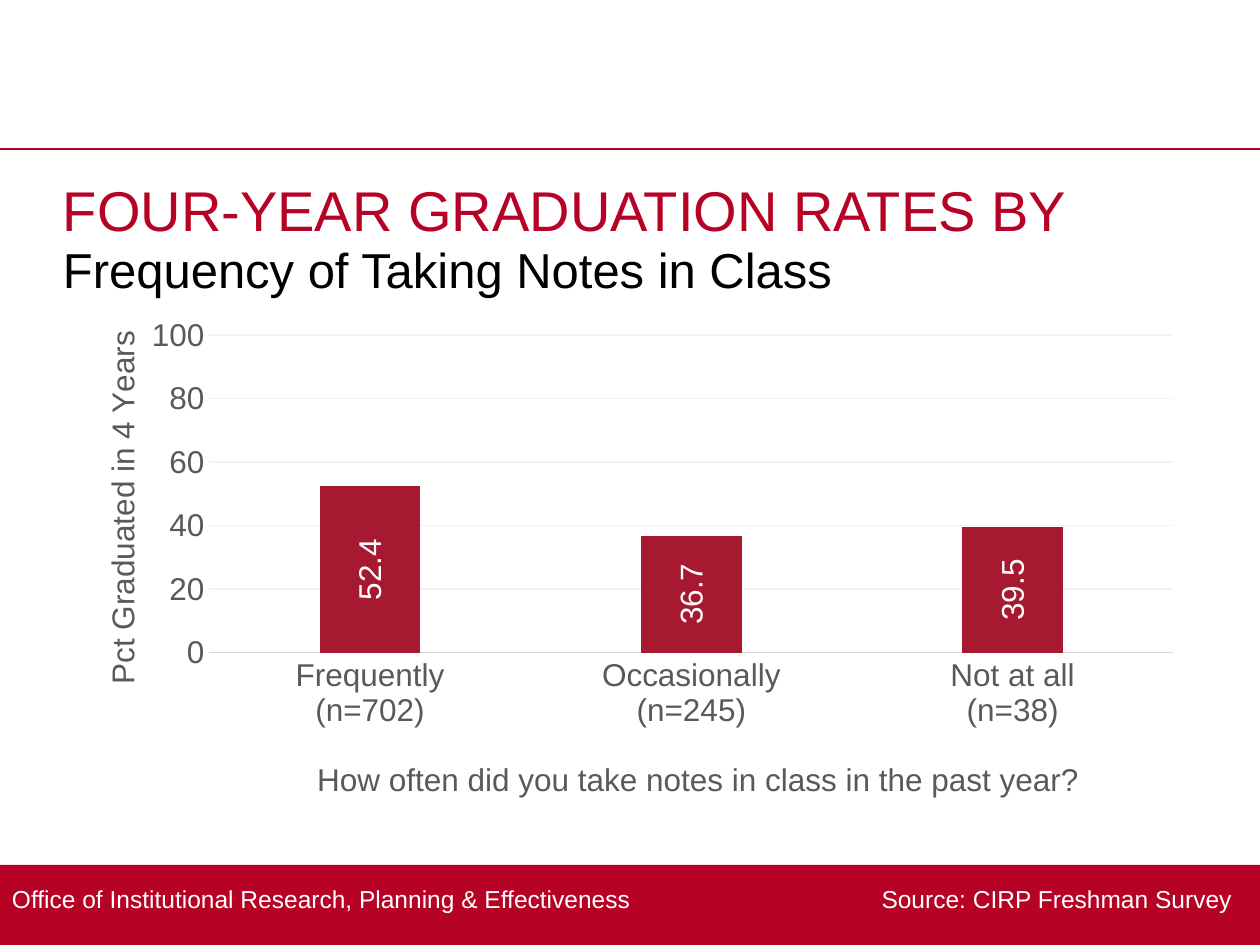
from lxml import etree
from pptx import Presentation
from pptx.chart.data import CategoryChartData
from pptx.dml.color import RGBColor
from pptx.enum.chart import XL_CHART_TYPE, XL_LABEL_POSITION, XL_TICK_MARK
from pptx.enum.shapes import MSO_CONNECTOR, MSO_SHAPE
from pptx.enum.text import MSO_ANCHOR
from pptx.oxml.ns import qn
from pptx.util import Emu, Pt

COLUMNS = XL_CHART_TYPE.COLUMN_CLUSTERED
CENTER = XL_LABEL_POSITION.CENTER
NO_TICK = XL_TICK_MARK.NONE
STRAIGHT = MSO_CONNECTOR.STRAIGHT
RECTANGLE = MSO_SHAPE.RECTANGLE
TOP, MIDDLE = MSO_ANCHOR.TOP, MSO_ANCHOR.MIDDLE

RED = RGBColor(0xB6, 0x02, 0x25)
BAR_RED = RGBColor(0xA7, 0x19, 0x30)
BLACK = RGBColor(0, 0, 0)
WHITE = RGBColor(0xFF, 0xFF, 0xFF)
GRAY = RGBColor(0x59, 0x59, 0x59)
AXIS_GRAY = RGBColor(0xD9, 0xD9, 0xD9)
GRID_GRAY = RGBColor(0xF2, 0xF2, 0xF2)

FONT = "Arial"
PX_PER_INCH = 126
QUARTER_TURN = "-5400000"


def px(length):
    return Emu(round(length * 914400 / PX_PER_INCH))


def assign(target, values):
    for name, value in values.items():
        setattr(target, name, value)


class SlideBuilder:
    def __init__(self, slide):
        self.slide = slide
        self.shapes = slide.shapes

    def style_font(self, font, size, color):
        assign(font, {"name": FONT, "size": Pt(size), "bold": False})
        font.color.rgb = color

    def style_line(self, line, color, width):
        line.color.rgb = color
        line.width = Pt(width)

    def band(self, box, color):
        band = self.shapes.add_shape(RECTANGLE, *map(px, box))
        band.shadow.inherit = False
        band.fill.solid()
        band.fill.fore_color.rgb = color
        band.line.fill.background()

    def rule(self, start, end, color, width):
        rule = self.shapes.add_connector(STRAIGHT, *map(px, start + end))
        self.style_line(rule.line, color, width)
        etree.SubElement(rule._element.spPr, qn("a:effectLst"))

    def text(self, box, words, size, color, left=0, top=0, anchor=TOP, right_tab=None):
        frame = self.shapes.add_textbox(*map(px, box)).text_frame
        assign(frame, {
            "word_wrap": True, "vertical_anchor": anchor,
            "margin_left": px(left), "margin_right": 0,
            "margin_top": px(top), "margin_bottom": 0,
        })
        paragraph = frame.paragraphs[0]
        if right_tab:
            tabs = etree.SubElement(paragraph._p.get_or_add_pPr(), qn("a:tabLst"))
            etree.SubElement(tabs, qn("a:tab"), pos=str(px(right_tab)), algn="r")
        run = paragraph.add_run()
        run.text = words
        self.style_font(run.font, size, color)

    def place(self, parent, index, fractions, inner=False):
        """Give a chart part a fixed place, in fractions of the chart."""
        for old in parent.findall(qn("c:layout")):
            parent.remove(old)
        layout = etree.Element(qn("c:layout"))
        manual = etree.SubElement(layout, qn("c:manualLayout"))
        settings = {"layoutTarget": "inner"} if inner else {}
        settings.update(xMode="edge", yMode="edge")
        settings.update(zip("xywh", fractions))
        for tag, value in settings.items():
            etree.SubElement(manual, qn("c:" + tag), val=str(value))
        parent.insert(index, layout)

    def axis(self, axis, title, title_at, size, turned=False):
        assign(axis, {"major_tick_mark": NO_TICK, "minor_tick_mark": NO_TICK})
        self.style_font(axis.tick_labels.font, size, GRAY)
        frame = axis.axis_title.text_frame
        frame.text = title
        self.style_font(frame.paragraphs[0].runs[0].font, size, GRAY)
        if turned:
            frame._txBody.bodyPr.set("rot", QUARTER_TURN)
        self.place(axis.axis_title._element, 1, title_at)

    def column_chart(self, box, rates, size, plot_at, category_title, value_title):
        data = CategoryChartData(number_format="#,##0.0")
        data.categories = list(rates)
        data.add_series("Series 1", list(rates.values()))
        chart = self.shapes.add_chart(COLUMNS, *map(px, box), data).chart
        assign(chart, {"has_legend": False, "has_title": False})
        self.style_font(chart.font, size, BLACK)
        self.place(chart._chartSpace.chart.plotArea, 0, plot_at, inner=True)

        # Axes and gridlines
        categories, values = chart.category_axis, chart.value_axis
        self.axis(categories, *category_title, size)
        self.axis(values, *value_title, size, turned=True)
        self.style_line(categories.format.line, AXIS_GRAY, 0.75)
        assign(values, {"minimum_scale": 0, "maximum_scale": 100, "major_unit": 20})
        values.format.line.fill.background()
        values.tick_labels.number_format = "0"
        values.tick_labels.number_format_is_linked = False
        self.style_line(values.major_gridlines.format.line, GRID_GRAY, 0.75)

        # Columns and their values
        plot = chart.plots[0]
        assign(plot, {"gap_width": 219, "overlap": -27, "vary_by_categories": False})
        series = plot.series[0]
        series.format.fill.solid()
        series.format.fill.fore_color.rgb = BAR_RED
        labels = series.data_labels
        self.style_font(labels.font, size, WHITE)
        assign(labels, {
            "show_value": True, "position": CENTER,
            "number_format": "#,##0.0", "number_format_is_linked": False,
        })
        body = labels._element.find(qn("c:txPr")).find(qn("a:bodyPr"))
        body.set("rot", QUARTER_TURN)
        body.set("vert", "horz")


def main():
    deck = Presentation()
    deck.slide_width, deck.slide_height = px(1260), px(945)
    builder = SlideBuilder(deck.slides.add_slide(deck.slide_layouts[6]))

    # Footer band and top rule
    builder.band((0, 865, 1260, 80), RED)
    builder.rule((0, 149), (1260, 149), RED, 1)
    builder.text(
        (0, 867, 1260, 64),
        "Office of Institutional Research, Planning & Effectiveness"
        "\tSource: CIRP Freshman Survey",
        14, WHITE, left=12, anchor=MIDDLE, right_tab=1220)

    # Headings
    builder.text((63, 233, 1134, 57), "Frequency of Taking Notes in Class",
                 28, BLACK, top=6)
    builder.text((63, 163, 1134, 110), "FOUR-YEAR GRADUATION RATES BY",
                 32, RED, top=12)

    # Graduation rates
    rates = {
        "Frequently\n(n=702)": 52.4,
        "Occasionally\n(n=245)": 36.7,
        "Not at all\n(n=38)": 39.5,
    }
    builder.column_chart(
        (62, 310, 1134, 504), rates, 18, (0.13, 0.05, 0.85, 0.63),
        ("How often did you take notes in class in the past year?", (0.22, 0.88)),
        ("Pct Graduated in 4 Years", (0.03, 0.03)))

    deck.save("out.pptx")


if __name__ == "__main__":
    main()
